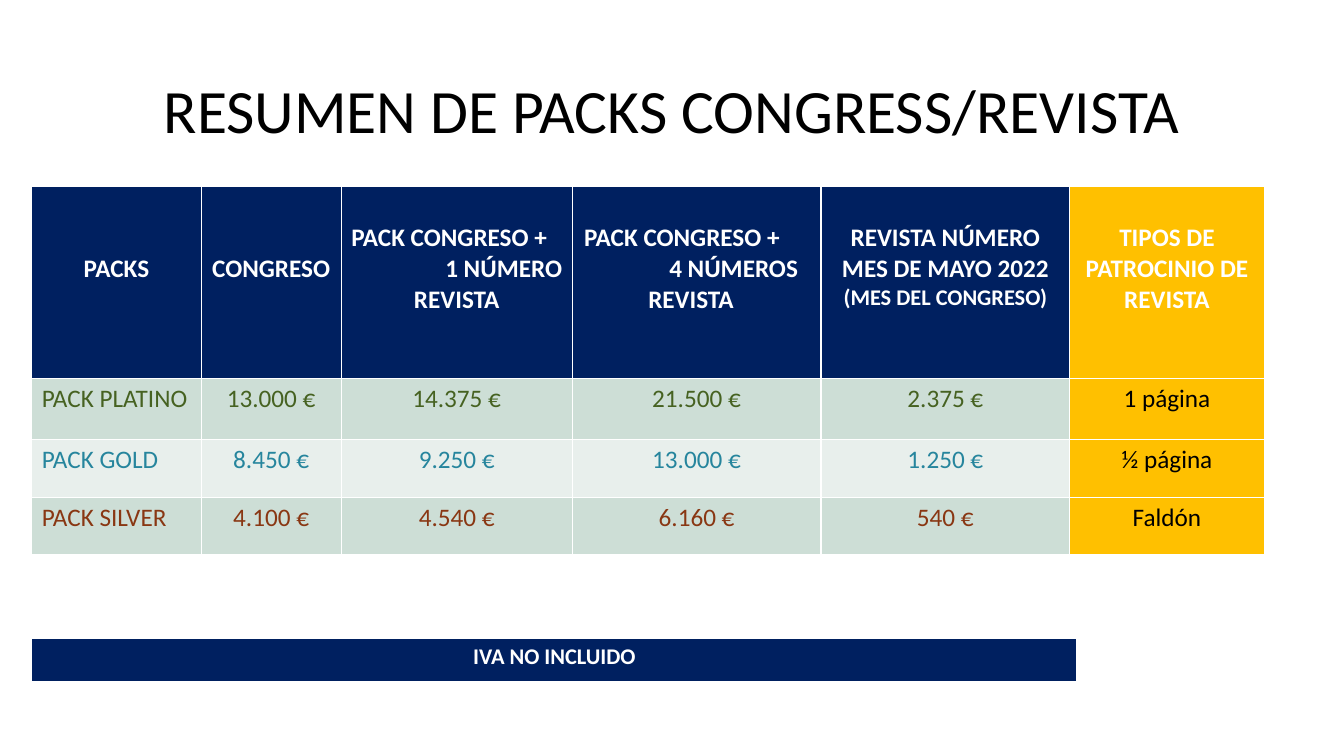
from pptx import Presentation
from pptx.dml.color import RGBColor
from pptx.enum.text import MSO_ANCHOR, PP_ALIGN
from pptx.util import Cm, Pt

FONT = "Calibri"
NAVY, AMBER, WHITE, BLACK = "002060", "FFC000", "FFFFFF", "000000"
LEFT, CENTER, RIGHT = PP_ALIGN.LEFT, PP_ALIGN.CENTER, PP_ALIGN.RIGHT
TABLE_LEFT = 0.8
COLUMNS = [4.27, 3.53, 5.82, 6.27, 6.27, 4.9]
ROWS = [4.83, 1.55, 1.45, 1.45]
ONE_LINE_DOWN, TWO_LINES_DOWN = 0.91, 1.68

HEADERS = [
    (TWO_LINES_DOWN, [("PACKS", CENTER, 18)]),
    (TWO_LINES_DOWN, [("CONGRESO", CENTER, 18)]),
    (ONE_LINE_DOWN, [("PACK CONGRESO +", LEFT, 18), ("1 NÚMERO", RIGHT, 18),
                     ("REVISTA", CENTER, 18)]),
    (ONE_LINE_DOWN, [("PACK CONGRESO +", LEFT, 18), ("4 NÚMEROS", RIGHT, 18),
                     ("REVISTA", CENTER, 18)]),
    (ONE_LINE_DOWN, [("REVISTA NÚMERO MES DE MAYO 2022", CENTER, 18),
                     ("(MES DEL CONGRESO)", CENTER, 16)]),
    (ONE_LINE_DOWN, [("TIPOS DE PATROCINIO DE REVISTA", CENTER, 18)]),
]
PACKS = [
    ("466221", "CDDED6", ["PACK PLATINO", "13.000 €", "14.375 €", "21.500 €", "2.375 €", "1 página"]),
    ("26859D", "E8EFEC", ["PACK GOLD", "8.450 €", "9.250 €", "13.000 €", "1.250 €", "½ página"]),
    ("893713", "CDDED6", ["PACK SILVER", "4.100 €", "4.540 €", "6.160 €", "540 €", "Faldón"]),
]


def rgb(value):
    return RGBColor.from_string(value)


def add_text(p, text, size, color, bold=False, align=CENTER):
    p.alignment = align
    r = p.add_run()
    r.text = text
    r.font.name = FONT
    r.font.size = Pt(size)
    r.font.bold = bold
    r.font.color.rgb = rgb(color)


def fill_cell(cell, fill, lines, color, bold=False):
    cell.fill.solid()
    cell.fill.fore_color.rgb = rgb(fill)
    tf = cell.text_frame
    for i, (text, align, size) in enumerate(lines):
        p = tf.add_paragraph() if i else tf.paragraphs[0]
        add_text(p, text, size, color, bold, align)


def add_grid(s, top, columns, rows):
    table = s.shapes.add_table(len(rows), len(columns), Cm(TABLE_LEFT), Cm(top),
                               Cm(sum(columns)), Cm(sum(rows))).table
    for column, width in zip(table.columns, columns):
        column.width = Cm(width)
    for row, height in zip(table.rows, rows):
        row.height = Cm(height)
    return table


def add_title(s, text):
    sp = s.shapes.title
    sp.left, sp.top, sp.width, sp.height = Cm(2.33), Cm(1.02), Cm(29.21), Cm(3.68)
    tf = sp.text_frame
    tf.vertical_anchor = MSO_ANCHOR.MIDDLE
    p = tf.paragraphs[0]
    p.line_spacing = 0.9
    add_text(p, text, 44, BLACK)


def add_prices(s):
    table = add_grid(s, 4.7, COLUMNS, ROWS)
    last = len(COLUMNS) - 1
    for c, (margin, lines) in enumerate(HEADERS):
        cell = table.cell(0, c)
        cell.margin_top = Cm(margin)
        fill_cell(cell, AMBER if c == last else NAVY, lines, WHITE, True)
    table.cell(0, 3).margin_left = Cm(0.3)
    table.cell(0, 3).margin_right = Cm(0.58)
    for r, (color, fill, texts) in enumerate(PACKS, 1):
        for c, text in enumerate(texts):
            lines = [(text, CENTER if c else LEFT, 18)]
            if c == last:
                fill_cell(table.cell(r, c), AMBER, lines, BLACK)
            else:
                fill_cell(table.cell(r, c), fill, lines, color)


def add_tax_note(s):
    table = add_grid(s, 16.08, [26.34], [1.09])
    fill_cell(table.cell(0, 0), NAVY, [("IVA NO INCLUIDO", CENTER, 16)], WHITE, True)


def main():
    prs = Presentation()
    prs.slide_width, prs.slide_height = Cm(33.87), Cm(19.05)
    s = prs.slides.add_slide(prs.slide_layouts[5])
    add_title(s, "RESUMEN DE PACKS CONGRESS/REVISTA")
    add_prices(s)
    add_tax_note(s)
    prs.save("out.pptx")


if __name__ == "__main__":
    main()
